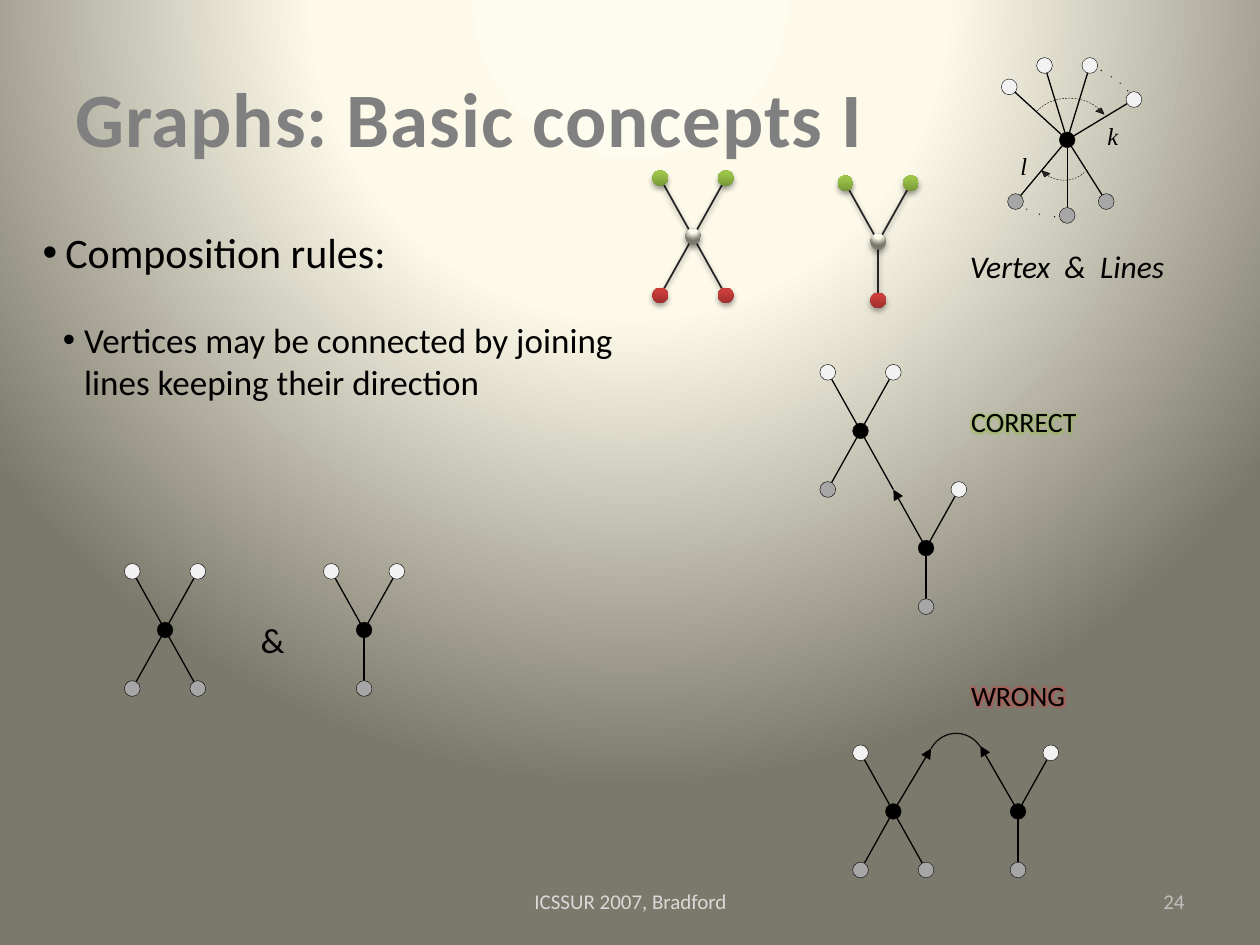
from dataclasses import dataclass

from lxml import etree
from pptx import Presentation
from pptx.dml.color import RGBColor
from pptx.enum import dml, shapes as sh, text as tx
from pptx.oxml import ns
from pptx.util import Inches, Pt


@dataclass(frozen=True)
class Theme:
    font: str = "Calibri"
    math_font: str = "Times New Roman"
    title_size: int = 44
    body_size: int = 24
    sub_size: int = 20
    caption_size: int = 18
    label_size: int = 16
    math_size: int = 14
    footer_size: int = 12
    ink: str = "000000"
    edge: str = "0D0D0D"
    soft_ink: str = "262626"
    title: str = "FCFCFD"
    title_edge: str = "808080"
    footer: str = "D9D9D9"
    number: str = "BFBFBF"
    correct: str = "9BBB59"
    wrong: str = "C0504D"
    cream: tuple = ((0, "FEFCEE"), (40, "FDFAEA"), (100, "7B796B"))
    green: tuple = ((0, "779737"), (80, "9BC348"), (100, "9DC746"))
    red: tuple = ((0, "9C2F2D"), (80, "CB3E3A"), (100, "CE3B37"))


T = Theme()
PLAIN = {"hub": T.ink, "out": "F2F2F2", "in": "A6A6A6"}
GLOSSY = {"hub": T.cream, "out": T.green, "in": T.red}

# Arms of a vertex: offset of the far end from the hub
DX, DY, NODE = 0.26, 0.465, 0.125
UL, UR, DL, DR, DOWN = (-DX, -DY), (DX, -DY), (-DX, DY), (DX, DY), (0, DY)


def sub(parent, tag, **attrs):
    return etree.SubElement(parent, ns.qn(tag), {k: str(v) for k, v in attrs.items()})


def color_xml(parent, color, alpha):
    c = sub(parent, "a:srgbClr", val=color)
    sub(c, "a:alpha", val=alpha * 1000)


def set_gradient(fill, root, stops):
    """Radial for the cream stops, upright linear for the others."""
    fill.gradient()
    grad = next(root.iter(ns.qn("a:gradFill")))
    for child in list(grad):
        grad.remove(child)
    gs = sub(grad, "a:gsLst")
    for pos, color in stops:
        sub(sub(gs, "a:gs", pos=pos * 1000), "a:srgbClr", val=color)
    if stops == T.cream:
        path = sub(grad, "a:path")
        path.set("path", "circle")
        sub(path, "a:fillToRect", l=50000, t=-80000, r=50000, b=180000)
    else:
        sub(grad, "a:lin", ang=270 * 60000, scaled=0)


def add_shadow(effects, alpha, dist):
    shadow = sub(effects, "a:outerShdw", blurRad=Pt(3.1), dist=Pt(dist),
                 dir=90 * 60000, rotWithShape=0)
    color_xml(shadow, T.ink, alpha)


def add_text(s, text, x, y, w, h, size=T.sub_size, color=T.ink, font=T.font,
             bold=False, italic=False, align=None, middle=True,
             bullet=False, indent=0, glow=None):
    """Each line of text becomes a paragraph; only the first takes the bullet."""
    sp = s.shapes.add_textbox(Inches(x), Inches(y), Inches(w), Inches(h))
    tf = sp.text_frame
    tf.word_wrap = True
    tf.vertical_anchor = tx.MSO_ANCHOR.MIDDLE if middle else tx.MSO_ANCHOR.TOP
    for i, line in enumerate(text.split("\n")):
        p = tf.paragraphs[0] if i == 0 else tf.add_paragraph()
        p.alignment = align
        if indent:
            ppr = p._p.get_or_add_pPr()
            ppr.set("marL", str(Inches(indent)))
            if bullet and i == 0:
                ppr.set("indent", str(-Inches(indent)))
                sub(ppr, "a:buFont", typeface="Arial")
                sub(ppr, "a:buChar", char="•")
        r = p.add_run()
        r.text = line
        f = r.font
        f.name, f.size, f.bold, f.italic = font, Pt(size), bold, italic
        f.color.rgb = RGBColor.from_string(color)
        if glow:
            effects = etree.Element(ns.qn("a:effectLst"))
            color_xml(sub(effects, "a:glow", rad=Pt(5)), glow, 60)
            r._r.rPr.find(ns.qn("a:solidFill")).addnext(effects)
    return sp


def add_line(shapes, x1, y1, x2, y2, arrow=False, glossy=False):
    c = shapes.add_connector(sh.MSO_CONNECTOR.STRAIGHT,
                             Inches(x1), Inches(y1), Inches(x2), Inches(y2))
    c.line.color.rgb = RGBColor.from_string(T.soft_ink if glossy else T.ink)
    c.line.width = Pt(1 if glossy else 0.75)
    if arrow:
        sub(c.line._get_or_add_ln(), "a:tailEnd", type="triangle")
    effects = sub(c._element.spPr, "a:effectLst")
    if glossy:
        add_shadow(effects, 38, 1.6)


def add_outline(shapes, kind, x, y, w, h, fill=None, line=T.edge, width=0.25,
                dash=False, adj=(), rotation=0):
    sp = shapes.add_shape(kind, Inches(x), Inches(y), Inches(w), Inches(h))
    sp.shadow.inherit = False
    sp.rotation = rotation
    for i, value in enumerate(adj):
        sp.adjustments[i] = value
    if fill is None:
        sp.fill.background()
    elif isinstance(fill, tuple):
        set_gradient(sp.fill, sp._element, fill)
    else:
        sp.fill.solid()
        sp.fill.fore_color.rgb = RGBColor.from_string(fill)
    if line is None:
        sp.line.fill.background()
    else:
        sp.line.color.rgb = RGBColor.from_string(line)
        sp.line.width = Pt(width)
        if dash:
            sp.line.dash_style = dml.MSO_LINE.DASH
    return sp


def add_node(shapes, x, y, fill, size=NODE, line=T.edge):
    glossy = isinstance(fill, tuple)
    sp = add_outline(shapes, sh.MSO_SHAPE.OVAL, x - size / 2, y - size / 2, size, size,
                     fill=fill, line=None if glossy else line)
    if glossy:
        add_shadow(sp._element.spPr.find(ns.qn("a:effectLst")), 35, 1.8)


def add_vertex(shapes, x, y, arms, bare=(), arrows=(), palette=PLAIN):
    """Hub at x, y; arms end in a node, bare arms in nothing, arrows in a head."""
    for dx, dy in (*arms, *bare, *arrows):
        add_line(shapes, x, y, x + dx, y + dy, (dx, dy) in arrows, palette is GLOSSY)
    add_node(shapes, x, y, palette["hub"])
    for dx, dy in arms:
        add_node(shapes, x + dx, y + dy, palette["out" if dy < 0 else "in"])


def add_general_vertex(s, x, y):
    """The vertex with k outgoing and l incoming lines, hub at x, y."""
    g = s.shapes.add_group_shape().shapes
    add_vertex(g, x, y, [(-0.46, -0.42), (-0.18, -0.59), (0.18, -0.59), (0.53, -0.32),
                         (-0.41, 0.49), (0, 0.6), (0.31, 0.49)])
    arc, arrow = sh.MSO_SHAPE.ARC, sh.MSO_SHAPE.CIRCULAR_ARROW
    head = (0, 7.41, 189.28, 189.05, 0.05)
    for dx, dy, w, h, end, ax, ay, turn in (
            (-0.29, -0.33, 0.61, 0.46, 204.37, -0.25, -0.32, 0),
            (-0.22, 0.03, 0.39, 0.29, 202.99, -0.29, -0.16, 180)):
        add_outline(g, arc, x + dx, y + dy, w, h, dash=True, adj=(124.35, end), rotation=turn)
        add_outline(g, arrow, x + ax, y + ay, 0.63, 0.52, fill=T.soft_ink, line=T.ink,
                    adj=head, rotation=turn)
    for dx, dy in ((0.27, -0.55), (0.35, -0.5), (0.42, -0.45), (0.48, -0.39),
                   (-0.32, 0.55), (-0.22, 0.59), (-0.1, 0.61)):
        add_node(g, x + dx, y + dy, T.edge, size=0.01, line=None)
    for name, dx, dy in (("k", 0.22, -0.2), ("l", -0.47, 0.04)):
        add_text(s, name, x + dx, y + dy, 0.41, 0.34, size=T.math_size,
                 font=T.math_font, italic=True, middle=False)
    add_text(s, "Vertex  &  Lines", x - 0.87, y + 0.8, 1.83, 0.4,
             size=T.caption_size, italic=True, middle=False)


def add_correct_join(s, x, y):
    add_vertex(s.shapes, x, y, [UL, UR, DL], bare=[DR])
    add_vertex(s.shapes, x + 2 * DX, y + 2 * DY, [UR, DOWN], arrows=[UL])
    add_text(s, "CORRECT", x + 0.78, y - 0.32, 2.04, 0.49, size=T.label_size, glow=T.correct)


def add_wrong_join(s, x, y):
    add_vertex(s.shapes, x, y, [UL, DL, DR], arrows=[(0.3, -0.5)])
    add_vertex(s.shapes, x + 0.99, y, [UR, DOWN], arrows=[(-0.3, -0.52)])
    add_outline(s.shapes, sh.MSO_SHAPE.ARC, x + 0.27, y - 0.62, 0.46, 0.48,
                width=0.75, adj=(126.42, 195.17))
    add_text(s, "WRONG", x + 0.52, y - 1.17, 2.04, 0.49, size=T.label_size, glow=T.wrong)


def add_pair(s, x, y):
    add_vertex(s.shapes, x, y, [UL, UR, DL, DR])
    add_text(s, "&", x + 0.66, y - 0.19, 0.46, 0.53)
    add_vertex(s.shapes, x + 1.58, y, [UL, UR, DOWN])


def add_title(s, x, y, w, h):
    sp = add_text(s, "Graphs: Basic concepts I", x, y, w, h,
                  size=T.title_size, color=T.title, bold=True)
    rpr = sp.text_frame.paragraphs[0].runs[0]._r.rPr
    rpr.set("spc", "50")
    sub(rpr.find(".//" + ns.qn("a:srgbClr")), "a:alpha", val=95000)
    ln = etree.Element(ns.qn("a:ln"), w=str(Pt(1.06)))
    sub(sub(ln, "a:solidFill"), "a:srgbClr", val=T.title_edge)
    rpr.insert(0, ln)


def main():
    prs = Presentation()
    prs.slide_width, prs.slide_height = Inches(10), Inches(7.5)
    s = prs.slides.add_slide(prs.slide_layouts[6])
    set_gradient(s.background.fill, s._element, T.cream)

    add_title(s, 0.5, 0.3, 9, 1.25)
    add_text(s, "Composition rules:", 0.24, 1.66, 7.63, 0.68, size=T.body_size,
             bullet=True, indent=0.18)
    add_text(s, "Vertices may be connected by joining\nlines keeping their direction",
             0.4, 2.38, 5.1, 0.97, bullet=True, indent=0.17)
    add_vertex(s.shapes, 5.5, 1.88, [UL, UR, DL, DR], palette=GLOSSY)
    add_vertex(s.shapes, 6.97, 1.92, [UL, UR, DOWN], palette=GLOSSY)
    add_pair(s, 1.31, 5)
    add_correct_join(s, 6.83, 3.42)
    add_wrong_join(s, 7.09, 6.44)
    add_general_vertex(s, 8.47, 1.11)
    add_text(s, "ICSSUR 2007, Bradford", 3.42, 6.95, 3.17, 0.4, size=T.footer_size,
             color=T.footer, align=tx.PP_ALIGN.CENTER)
    add_text(s, "24", 7.17, 6.95, 2.33, 0.4, size=T.footer_size,
             color=T.number, align=tx.PP_ALIGN.RIGHT)
    prs.save("out.pptx")


if __name__ == "__main__":
    main()
